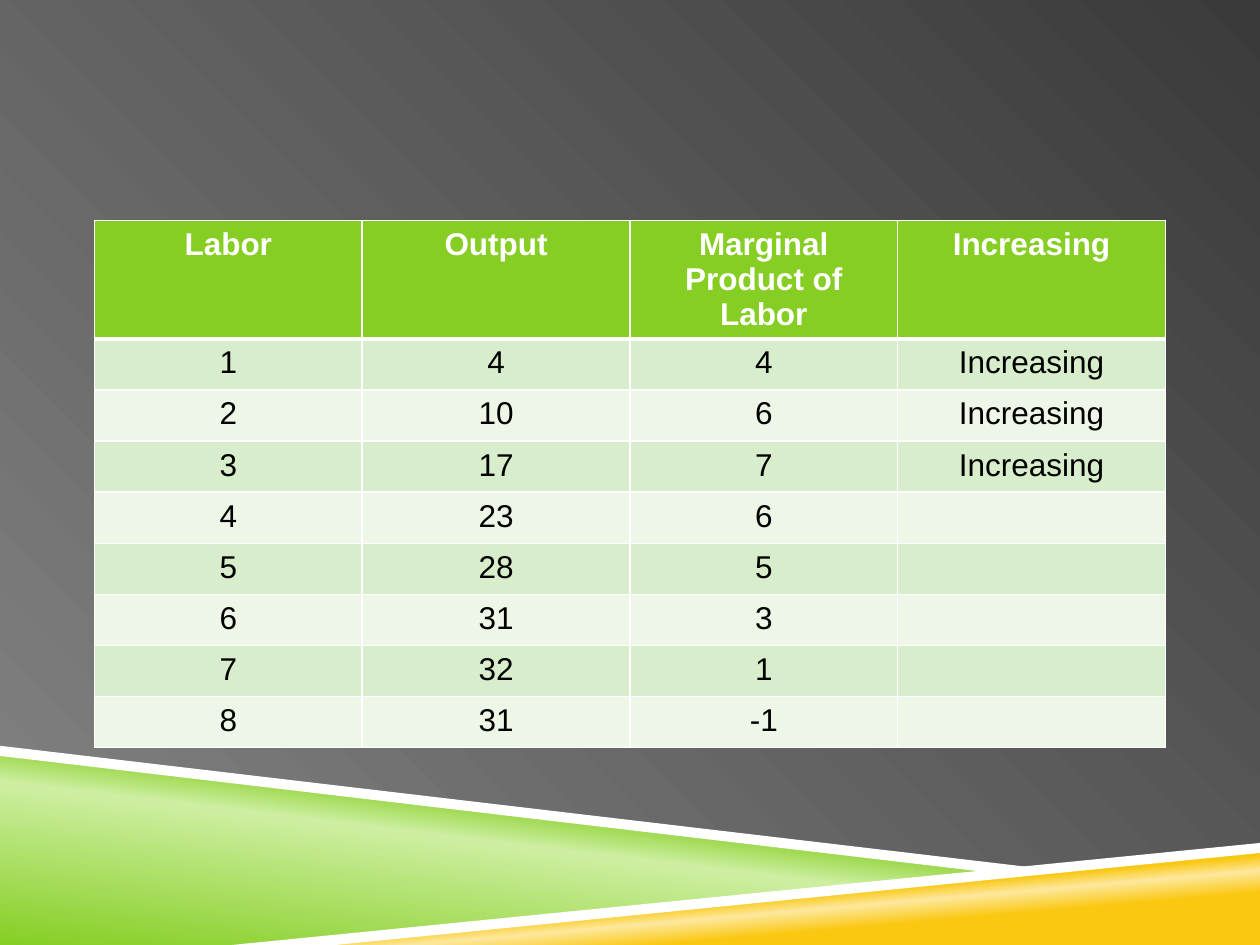
import pptx
import pptx.dml.color
import pptx.enum.text
import pptx.oxml
import pptx.oxml.ns
import pptx.util

Pt = pptx.util.Pt

# Content
HEADER = ["Labor", "Output", "Marginal Product of Labor", "Increasing"]
ROWS = [
    (1, 4, 4, "Increasing"),
    (2, 10, 6, "Increasing"),
    (3, 17, 7, "Increasing"),
    (4, 23, 6, ""),
    (5, 28, 5, ""),
    (6, 31, 3, ""),
    (7, 32, 1, ""),
    (8, 31, -1, ""),
]

THEME = {
    "font": "Arial",
    "size": 18,
    "header_text": "FFFFFF",
    "body_text": "000000",
    "header_fill": "86CE24",
    "bands": ["D8EDCB", "EDF6E7"],
    "border": "FFFFFF",
    "backdrop": [(0, "848484"), (100, "3A3A3A")],
    "green": [(0, "86CE24"), (52, "CEEFA2"), (66, "86CE24"), (100, "86CE24")],
    "yellow": [(0, "FAC810"), (28, "FAC810"), (40, "FDE89E"), (48, "FAC810"), (100, "FAC810")],
    "edge": "FFFFFF",
}

# Corner points, fill (gradient stops or one colour) and gradient angle
WEDGES = [
    ([(0, 429.8), (570.2, 498.2), (144, 540), (0, 540)], THEME["green"], 277),
    ([(142.6, 540), (720, 483.8), (720, 540)], THEME["yellow"], 265),
    ([(0, 426.2), (0, 432), (568.8, 499), (599, 496.8)], THEME["edge"], None),
    ([(720, 481.7), (132.5, 540), (191.5, 540), (720, 487.4)], THEME["edge"], None),
]

PAGE_WIDTH, PAGE_HEIGHT = 720, 540
TABLE_LEFT, TABLE_TOP = 54, 126
COLUMN_WIDTH, HEADER_HEIGHT, ROW_HEIGHT = 153, 67.4, 29.2
NAMESPACE = pptx.oxml.ns.nsdecls("a")


def color(code):
    return pptx.dml.color.RGBColor.from_string(code)


def apply_gradient(fill, parent, stops, direction):
    """Swap the solid fill inside parent for a gradient."""
    fill.solid()
    solid = next(parent.iter(pptx.oxml.ns.qn("a:solidFill")))
    marks = "".join(
        f'<a:gs pos="{place * 1000}"><a:srgbClr val="{code}"/></a:gs>' for place, code in stops
    )
    gradient = pptx.oxml.parse_xml(
        f'<a:gradFill {NAMESPACE} rotWithShape="1"><a:gsLst>{marks}</a:gsLst>{direction}</a:gradFill>'
    )
    solid.getparent().replace(solid, gradient)


def add_wedge(page, points, paint, angle):
    corners = [(Pt(x), Pt(y)) for x, y in points]
    builder = page.shapes.build_freeform(*corners[0], scale=1.0)
    builder.add_line_segments(corners[1:], close=True)
    wedge = builder.convert_to_shape()
    wedge.shadow.inherit = False
    wedge.line.fill.background()
    if angle is None:
        wedge.fill.solid()
        wedge.fill.fore_color.rgb = color(paint)
    else:
        direction = f'<a:lin ang="{angle * 60000}" scaled="0"/>'
        apply_gradient(wedge.fill, wedge._element.spPr, paint, direction)


def set_borders(cell, widths):
    properties = cell._tc.get_or_add_tcPr()
    for index, (side, width) in enumerate(widths.items()):
        border = pptx.oxml.parse_xml(
            f'<a:ln{side} {NAMESPACE} w="{Pt(width)}"><a:solidFill>'
            f'<a:srgbClr val="{THEME["border"]}"/></a:solidFill></a:ln{side}>'
        )
        properties.insert(index, border)


def fill_cell(cell, text, row):
    is_header = row == 0
    cell.fill.solid()
    cell.fill.fore_color.rgb = color(
        THEME["header_fill"] if is_header else THEME["bands"][(row - 1) % 2]
    )
    set_borders(cell, {"L": 1, "R": 1, "T": 3 if row == 1 else 1, "B": 3 if is_header else 1})
    para = cell.text_frame.paragraphs[0]
    para.alignment = pptx.enum.text.PP_ALIGN.CENTER
    if text:
        span = para.add_run()
        span.text = text
        span.font.name = THEME["font"]
        span.font.size = Pt(THEME["size"])
        span.font.bold = is_header
        span.font.color.rgb = color(THEME["header_text" if is_header else "body_text"])


def add_product_table(page):
    grid = [HEADER, *ROWS]
    heights = [HEADER_HEIGHT] + [ROW_HEIGHT] * len(ROWS)
    table = page.shapes.add_table(
        len(grid), len(HEADER), Pt(TABLE_LEFT), Pt(TABLE_TOP),
        Pt(COLUMN_WIDTH * len(HEADER)), Pt(sum(heights)),
    ).table
    for column in table.columns:
        column.width = Pt(COLUMN_WIDTH)
    for row, values in enumerate(grid):
        table.rows[row].height = Pt(heights[row])
        for column, value in enumerate(values):
            fill_cell(table.cell(row, column), str(value), row)


def main():
    deck = pptx.Presentation()
    deck.slide_width, deck.slide_height = Pt(PAGE_WIDTH), Pt(PAGE_HEIGHT)
    page = deck.slides.add_slide(deck.slide_layouts[6])

    # Backdrop, light at the lower left corner
    corner = '<a:path path="circle"><a:fillToRect t="100000" r="100000"/></a:path>'
    apply_gradient(page.background.fill, page._element, THEME["backdrop"], corner)

    # Wedges along the bottom
    for points, paint, angle in WEDGES:
        add_wedge(page, points, paint, angle)

    # Table
    add_product_table(page)
    deck.save("out.pptx")


if __name__ == "__main__":
    main()
